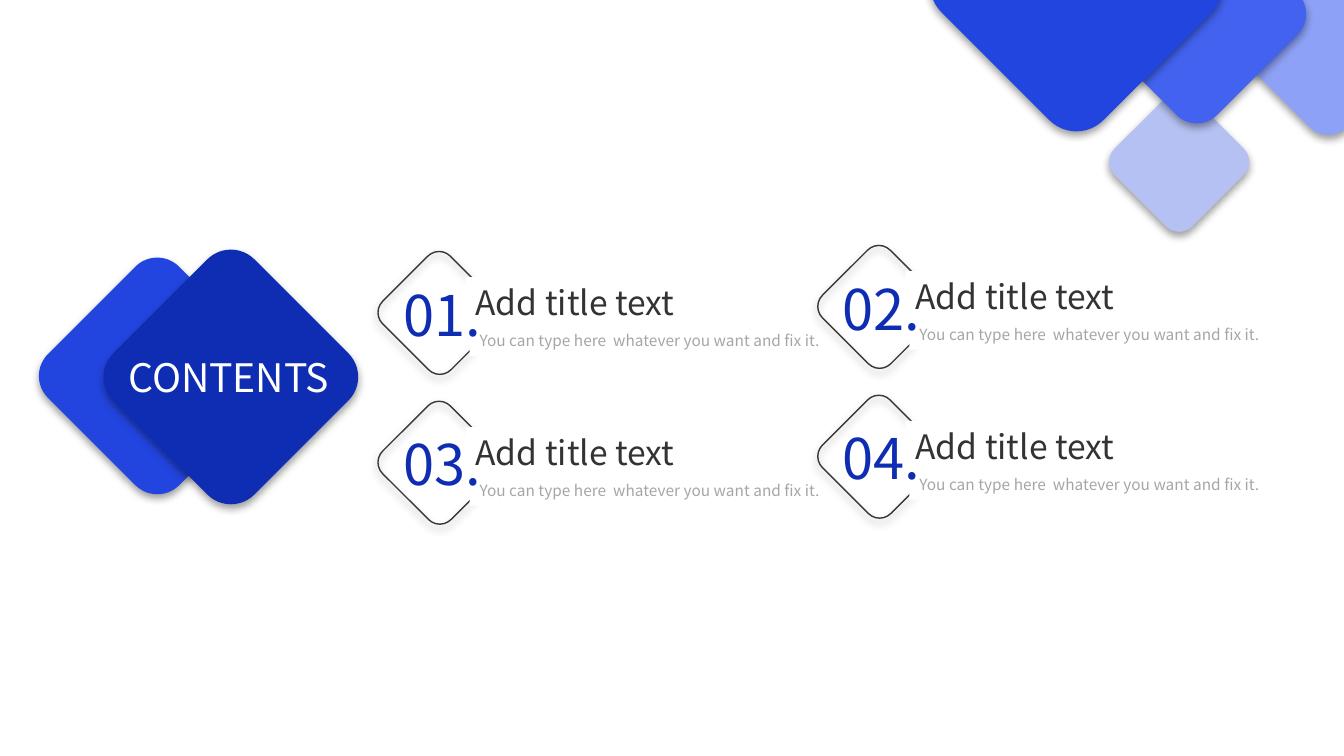
import dataclasses

import lxml.etree
import pptx
import pptx.dml.color
import pptx.enum.shapes
import pptx.enum.text
import pptx.oxml.ns
import pptx.util

# The slide is a grid of square cells; every length below is in cells.
COLUMNS, ROWS = 133.33, 75
CELL = pptx.util.Inches(0.1)


@dataclasses.dataclass(frozen=True)
class Theme:
    font: str = "Noto Sans CJK SC"
    navy: str = "0E2DB2"
    blue: str = "2345DF"
    sky: str = "4262EF"
    pale: str = "8DA1F6"
    mist: str = "B5C1F2"
    white: str = "FFFFFF"
    outline: str = "393737"
    title: str = "333333"
    detail: str = "A6A6A6"
    heading_size: int = 28
    number_size: int = 40
    title_size: int = 24
    detail_size: int = 11


THEME = Theme()


def cells(*lengths):
    return [round(length * CELL) for length in lengths]


def rgb(code):
    return pptx.dml.color.RGBColor.from_string(code)


def add_shadow(shape):
    """Soft black shadow falling straight down."""
    shape.shadow.inherit = False
    effects = shape._element.spPr.find(pptx.oxml.ns.qn("a:effectLst"))
    shadow = lxml.etree.SubElement(
        effects, pptx.oxml.ns.qn("a:outerShdw"),
        blurRad=str(pptx.util.Pt(6)), dist=str(pptx.util.Pt(3)),
        dir="5400000", algn="t", rotWithShape="0")
    colour = lxml.etree.SubElement(shadow, pptx.oxml.ns.qn("a:srgbClr"), val="000000")
    lxml.etree.SubElement(colour, pptx.oxml.ns.qn("a:alpha"), val="39000")


def add_diamond(group, left, top, width, height, fill=None):
    """Rounded square on its corner: filled, or outlined when no fill is given."""
    diamond = group.shapes.add_shape(
        pptx.enum.shapes.MSO_SHAPE.ROUNDED_RECTANGLE, *cells(left, top, width, height))
    diamond.rotation = 45
    if fill:
        diamond.fill.solid()
        diamond.fill.fore_color.rgb = rgb(fill)
        diamond.line.fill.background()
    else:
        diamond.fill.background()
        diamond.line.color.rgb = rgb(THEME.outline)
        diamond.line.width = pptx.util.Pt(1)
    add_shadow(diamond)


def add_text(group, left, top, width, height, text, size, colour,
             fill=None, wrap=False, align=pptx.enum.text.PP_ALIGN.LEFT):
    box = group.shapes.add_textbox(*cells(left, top, width, height))
    if fill:
        box.fill.solid()
        box.fill.fore_color.rgb = rgb(fill)
    frame = box.text_frame
    frame.word_wrap = wrap
    frame.auto_size = pptx.enum.text.MSO_AUTO_SIZE.SHAPE_TO_FIT_TEXT
    para = frame.paragraphs[0]
    para.alignment = align
    span = para.add_run()
    span.text = text
    span.font.name = THEME.font
    span.font.size = pptx.util.Pt(size)
    span.font.color.rgb = rgb(colour)
    # East Asian face matches the Latin one
    lxml.etree.SubElement(span.font._element, pptx.oxml.ns.qn("a:ea"), typeface=THEME.font)


def add_heading(page, left, top):
    """Two overlapping diamonds with the slide heading."""
    group = page.shapes.add_group_shape()
    add_diamond(group, left, top + 0.6, 18.4, 18.4, THEME.blue)
    add_diamond(group, left + 6.6, top, 19.8, 19.8, THEME.navy)
    add_text(group, left - 7.2, top + 7.1, 47, 5.7, "CONTENTS", THEME.heading_size,
             THEME.white, wrap=True, align=pptx.enum.text.PP_ALIGN.CENTER)


def add_entry(page, left, top, number):
    """One contents entry: outlined diamond, detail, title and number."""
    group = page.shapes.add_group_shape()
    add_diamond(group, left, top, 9.6, 9.5)
    add_text(group, left + 7.8, top + 6.1, 38, 2.9,
             "You can type here  whatever you want and fix it.",
             THEME.detail_size, THEME.detail, fill=THEME.white, wrap=True)
    add_text(group, left + 7.4, top + 1.2, 23, 5, "Add title text",
             THEME.title_size, THEME.title, fill=THEME.white)
    add_text(group, left + 0.2, top + 1, 10, 7.7, f"{number:02d}.",
             THEME.number_size, THEME.navy)


def add_entries(page, left, top):
    """Two by two entries, numbered across; the right column sits a little higher."""
    column_step, row_step, column_rise = 43.63, 14.86, 0.6
    for column in range(2):
        for row in range(2):
            add_entry(page, left + column * column_step,
                      top + row * row_step - column * column_rise,
                      2 * row + column + 1)


def add_corner(page, right):
    """Cluster of diamonds hanging from the top right corner."""
    group = page.shapes.add_group_shape()
    for inset, top, side, fill in (
        (9.5, -4.7, 15.9, THEME.pale),
        (21.8, 10.6, 10.9, THEME.mist),
        (23.1, -7.1, 17, THEME.sky),
        (37.9, -12.8, 22.7, THEME.blue),
    ):
        add_diamond(group, right - inset, top, side, side, fill)


def main():
    deck = pptx.Presentation()
    deck.slide_width, deck.slide_height = cells(COLUMNS, ROWS)
    page = deck.slides.add_slide(deck.slide_layouts[6])
    add_heading(page, 6.4, 27.5)
    add_entries(page, 38.8, 26.3)
    add_corner(page, COLUMNS)
    deck.save("out.pptx")


if __name__ == "__main__":
    main()
